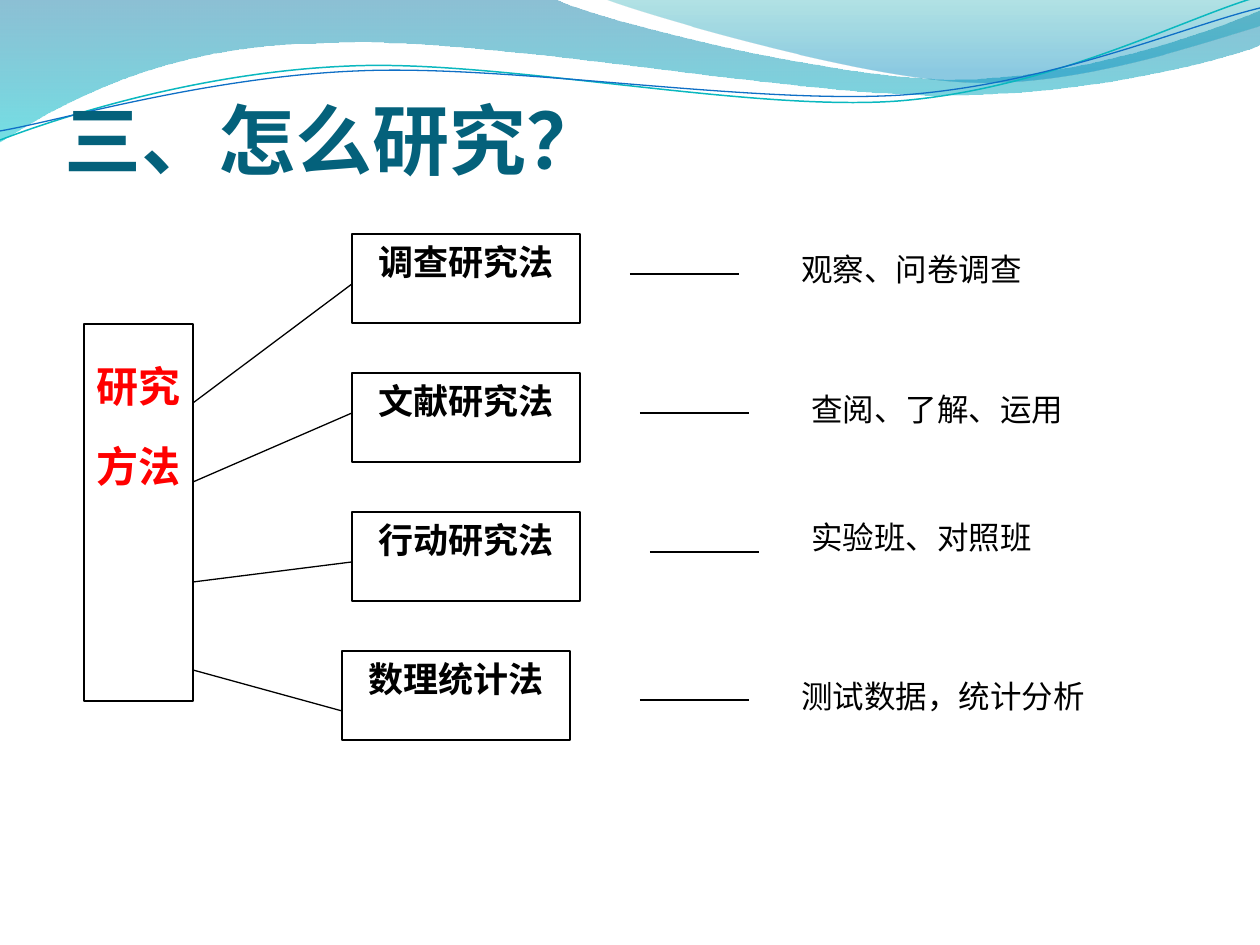
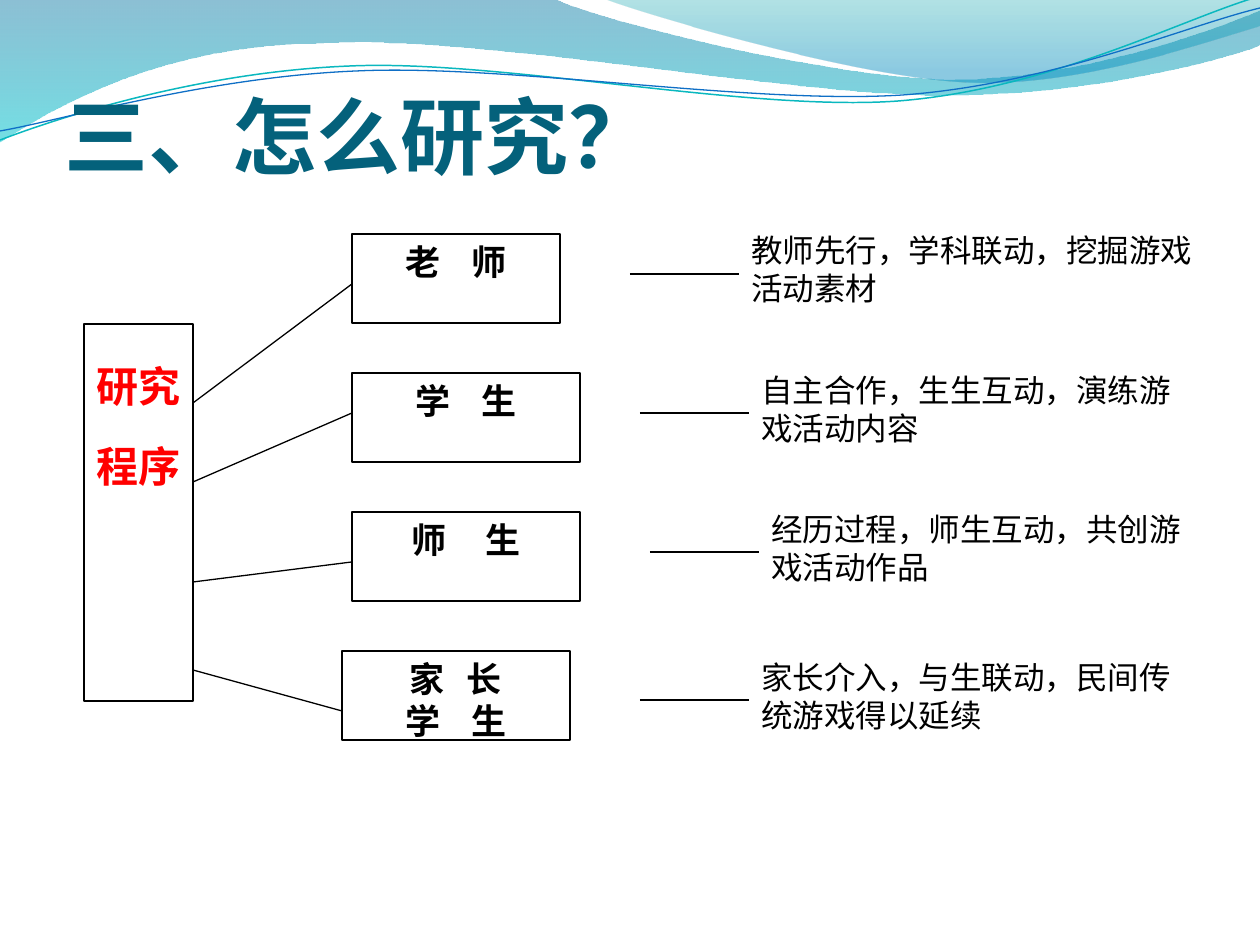
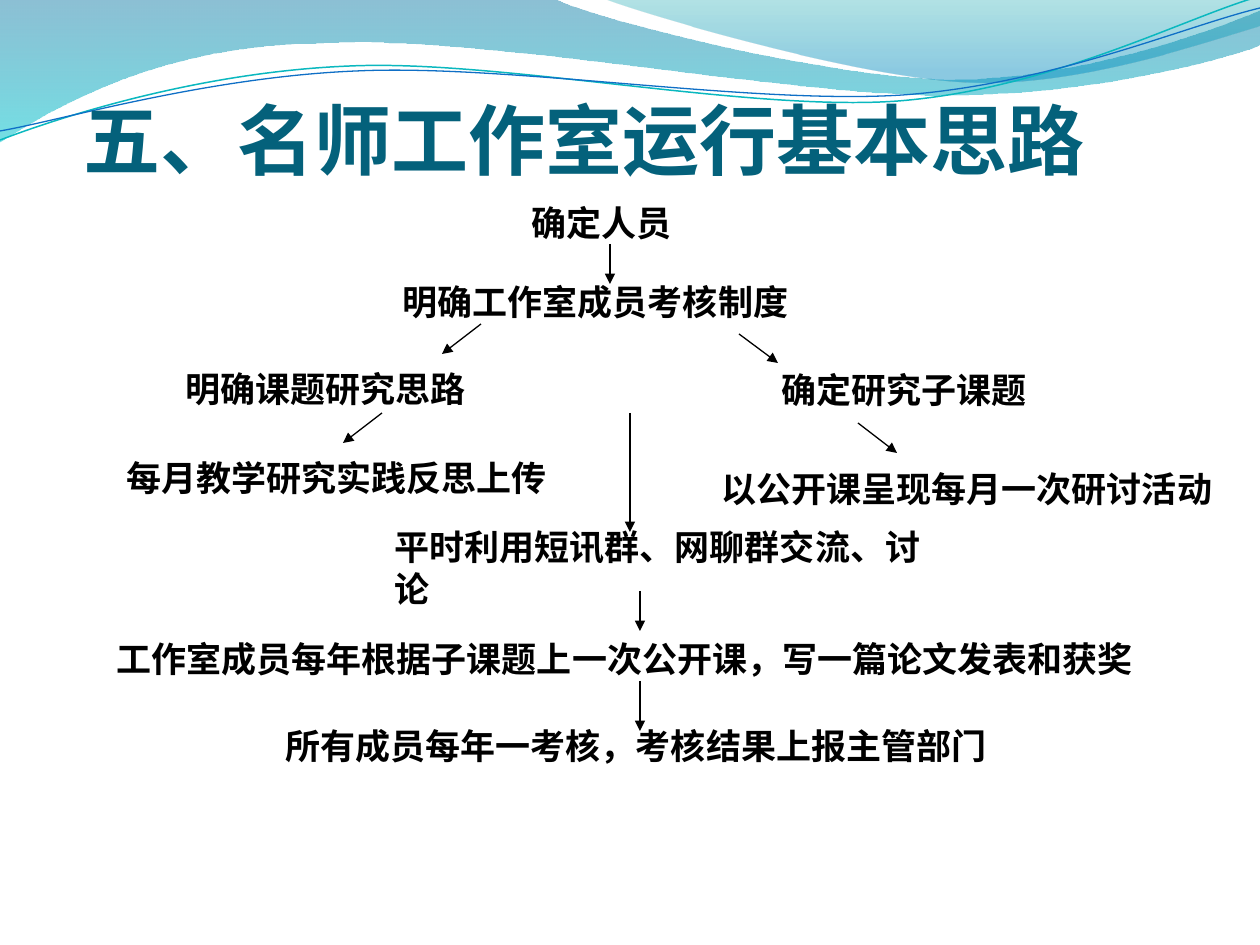
from lxml import etree
from pptx import Presentation
from pptx.dml.color import RGBColor
from pptx.enum.lang import MSO_LANGUAGE_ID
from pptx.enum.shapes import MSO_CONNECTOR, MSO_SHAPE
from pptx.enum.text import MSO_ANCHOR, PP_ALIGN
from pptx.oxml.ns import qn
from pptx.util import Emu, Pt

PX = 914400 // 126
STRAIGHT, RECT = MSO_CONNECTOR.STRAIGHT, MSO_SHAPE.RECTANGLE
TOP, MIDDLE, BOTTOM = MSO_ANCHOR.TOP, MSO_ANCHOR.MIDDLE, MSO_ANCHOR.BOTTOM
CENTER = PP_ALIGN.CENTER
CHINESE = MSO_LANGUAGE_ID.SIMPLIFIED_CHINESE

BLACK, WHITE, RED, TITLE_BLUE = "000000", "FFFFFF", "FF0000", "04617B"
SANS, SERIF, CJK = "Arial", "Times New Roman", "Noto Sans CJK SC"

# Outlines: a pair of numbers is a straight segment, six numbers a Bezier curve.
# Gradient stops: position, colour, opacity in percent.
BANDS = [
    ([(0, -1), (554, -1), (600, 21, 837, 79, 955, 79), (1075, 79, 1207, 33, 1260, 11),
      (1261, 45), (1239, 55, 1096, 96, 940, 95), (784, 95, 481, 35, 324, 43),
      (163, 44, 58, 105, -1, 142)],
     [(0, "0074A1", 45), (1, "00C6CF", 55)]),
    ([(604, -1), (641, 14, 859, 78, 969, 82), (1079, 87, 1211, 40, 1260, 26), (1260, 0)],
     [(0, "00A1A9", 30), (0.8, "008BBF", 45)]),
]
WAVES = [
    ([(0, 140), (60, 117, 199, 72, 349, 66), (498, 59, 747, 112, 898, 101),
      (1050, 89, 1182, 19, 1257, -3)], "0AB8BF", 0.85),
    ([(0, 131), (59, 121, 207, 77, 357, 71), (508, 64, 752, 105, 903, 95),
      (1053, 84, 1185, 26, 1260, 8)], "0F6FC6", 0.75),
]

SIDE = (84, 324, 109, 377)
ROW_TOP, ROW_PITCH, ROW_HEIGHT = 234, 139, 89
# box left, branch start y, branch end y, dash left, dash y
ROWS = [
    (352, 403, 284, 630, 274),
    (352, 482, 413, 640, 413),
    (352, 582, 562, 650, 552),
    (342, 670, 711, 640, 700),
]
DASH = 109

# Rows: box width, box lines, note, note position. A space in a box line
# is widened by the number of points given with it.
TREES = [
    {"title": "三、怎么研究？", "size": 44, "side": "研究\n方法", "rows": [
        (228, [("调查研究法", 0)], "观察、问卷调查", (789, 244, 328, 50)),
        (228, [("文献研究法", 0)], "查阅、了解、运用", (799, 384, 328, 50)),
        (228, [("行动研究法", 0)], "实验班、对照班", (799, 512, 328, 50)),
        (228, [("数理统计法", 0)], "测试数据，统计分析", (789, 671, 328, 50)),
    ]},
    {"title": "三、怎么研究？", "size": 48, "side": "研究\n程序", "rows": [
        (208, [("老 师", 6.5)], "教师先行，学科联动，挖掘游戏活动素材", (739, 225, 468, 88)),
        (228, [("学 生", 6.5)], "自主合作，生生互动，演练游戏活动内容", (749, 365, 456, 88)),
        (228, [("师 生", 9)], "经历过程，师生互动，共创游戏活动作品", (759, 504, 446, 88)),
        (228, [("家 长", 4), ("学 生", 6.5)], "家长介入，与生联动，民间传统游戏得以延续",
         (749, 652, 446, 88)),
    ]},
]

FLOW_TITLE = "五、名师工作室运行基本思路"
STEP_HEIGHT = 54
# left, top, width, text, font, indent
STEPS = [
    (491, 195, 248, "确定人员", CJK, 28),
    (362, 274, 496, "明确工作室成员考核制度", CJK, 28),
    (173, 361, 338, "明确课题研究思路", SANS, 0),
    (769, 363, 307, "确定研究子课题", CJK, 0),
    (114, 451, 456, "每月教学研究实践反思上传", SANS, 0),
    (382, 540, 576, "平时利用短讯群、网聊群交流、讨论", CJK, 0),
    (104, 631, 1062, "工作室成员每年根据子课题上一次公开课，写一篇论文发表和获奖", SANS, 0),
    (709, 461, 520, "以公开课呈现每月一次研讨活动", SANS, 0),
    (273, 718, 753, "所有成员每年一考核，考核结果上报主管部门", SANS, 0),
]
ARROWS = [
    (610, 244, 610, 284), (481, 324, 442, 354), (739, 334, 778, 363),
    (630, 413, 630, 532), (382, 413, 343, 443), (858, 423, 897, 453),
    (640, 591, 640, 631), (640, 681, 640, 731),
]


def rgb(color):
    return RGBColor.from_string(color)


def px(*lengths):
    return [Emu(n * PX) for n in lengths]


def add_outline(s, outline, close):
    """Draw through all points, then merge each curve's three segments into one."""
    points = [part[i:i + 2] for part in outline for i in range(0, len(part), 2)]
    builder = s.shapes.build_freeform(*points[0], scale=PX)
    builder.add_line_segments(points[1:], close=close)
    sp = builder.convert_to_shape()
    sp.shadow.inherit = False
    segments = iter(list(sp.element.iter(qn("a:lnTo"))))
    for part in outline[1:]:
        first = next(segments)
        if len(part) == 6:
            first.tag_name = None
            curve = etree.Element(qn("a:cubicBezTo"))
            first.addprevious(curve)
            for segment in (first, next(segments), next(segments)):
                curve.append(segment[0])
                segment.getparent().remove(segment)
    return sp


def add_backdrop(s):
    for outline, stops in BANDS:
        sp = add_outline(s, outline, True)
        sp.line.fill.background()
        sp.fill.gradient()
        sp.fill.gradient_angle = 270
        for stop, (position, color, _) in zip(sp.fill.gradient_stops, stops):
            stop.position = position
            stop.color.rgb = rgb(color)
        for clr, (_, _, opacity) in zip(sp.element.iter(qn("a:srgbClr")), stops):
            etree.SubElement(clr, qn("a:alpha"), val=str(opacity * 1000))
    for outline, color, width in WAVES:
        sp = add_outline(s, outline, False)
        sp.fill.background()
        sp.line.color.rgb = rgb(color)
        sp.line.width = Pt(width)


def style(p, size, font, color=BLACK, bold=False):
    for r in p.runs:
        r.font.size = Pt(size)
        r.font.bold = bold
        r.font.color.rgb = rgb(color)
        r.font.name = font
        r.font.language_id = CHINESE
        etree.SubElement(r.font._element, qn("a:ea"), typeface=CJK)


def add_text(s, box, text, size, font, color=BLACK, bold=False, anchor=MIDDLE):
    tf = s.shapes.add_textbox(*px(*box)).text_frame
    tf.word_wrap = True
    tf.vertical_anchor = anchor
    tf.text = text
    style(tf.paragraphs[0], size, font, color, bold)
    return tf


def add_box(s, box):
    sp = s.shapes.add_shape(RECT, *px(*box))
    sp.shadow.inherit = False
    sp.fill.solid()
    sp.fill.fore_color.rgb = rgb(WHITE)
    sp.line.color.rgb = rgb(BLACK)
    sp.line.width = Pt(0.75)
    tf = sp.text_frame
    tf.word_wrap = True
    tf.vertical_anchor = TOP
    return tf


def add_line(s, ends, arrow=False):
    line = s.shapes.add_connector(STRAIGHT, *px(*ends))
    line.line.color.rgb = rgb(BLACK)
    line.line.width = Pt(0.75)
    if arrow:
        etree.SubElement(line.line._get_or_add_ln(), qn("a:tailEnd"), type="triangle")
    etree.SubElement(line.element.spPr, qn("a:effectLst"))


def add_slide(prs, title, size, indent=0):
    s = prs.slides.add_slide(prs.slide_layouts[6])
    add_backdrop(s)
    tf = add_text(s, (65, 86, 1134, 99), title, size, SANS, TITLE_BLUE, True, BOTTOM)
    tf.margin_left = Emu(indent * PX)
    tf.margin_right = tf.margin_bottom = 0
    return s


def add_box_line(p, text, gap):
    """Write one centred line, widening its space by the gap."""
    head, space, tail = text.partition(" ")
    p.alignment = CENTER
    for part in filter(None, (head + space, tail)):
        p.add_run().text = part
    style(p, 20, SERIF, bold=True)
    if gap:
        p.runs[0].font._element.set("spc", str(int(gap * 100)))


def add_tree(prs, tree):
    s = add_slide(prs, tree["title"], tree["size"])
    tf = add_box(s, SIDE)
    tf.text = tree["side"]
    for p in tf.paragraphs:
        p.alignment = CENTER
        p.line_spacing = 1.6
        style(p, 24, SERIF, RED, True)
    side_right = SIDE[0] + SIDE[2]
    for i, (place, row) in enumerate(zip(ROWS, tree["rows"])):
        left, start_y, end_y, dash_left, dash_y = place
        width, lines, note, note_box = row
        add_line(s, (side_right, start_y, left, end_y))
        tf = add_box(s, (left, ROW_TOP + i * ROW_PITCH, width, ROW_HEIGHT))
        for j, (text, gap) in enumerate(lines):
            add_box_line(tf.add_paragraph() if j else tf.paragraphs[0], text, gap)
        add_line(s, (dash_left, dash_y, dash_left + DASH, dash_y))
        add_text(s, note_box, note, 18, SANS)


def add_flow(prs):
    s = add_slide(prs, FLOW_TITLE, 44, indent=19)
    for left, top, width, text, font, indent in STEPS:
        tf = add_text(s, (left, top, width, STEP_HEIGHT), text, 20, font, bold=True)
        tf.margin_left += indent * PX
    for ends in ARROWS:
        add_line(s, ends, arrow=True)


def main():
    prs = Presentation()
    prs.slide_width, prs.slide_height = px(1260, 945)
    for tree in TREES:
        add_tree(prs, tree)
    add_flow(prs)
    prs.save("out.pptx")


if __name__ == "__main__":
    main()
